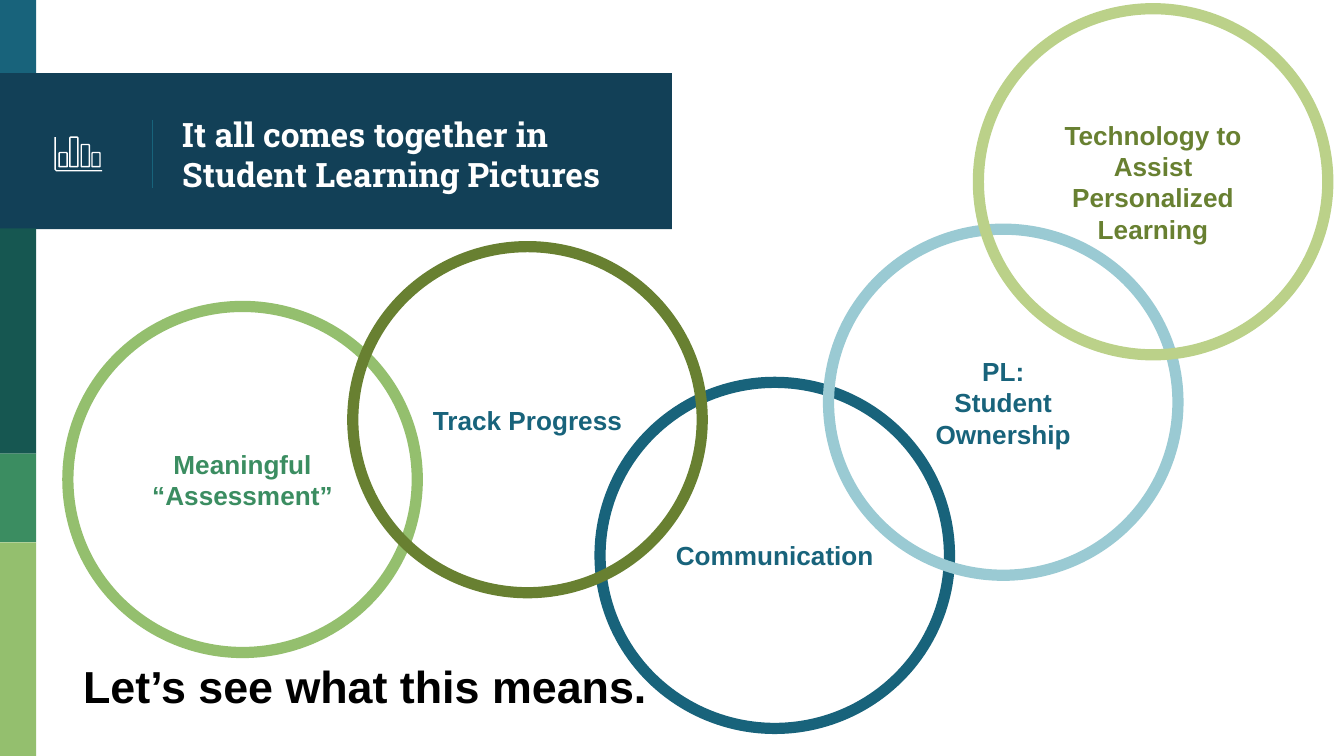
from dataclasses import dataclass

import pptx
import pptx.dml.color
import pptx.enum.shapes
import pptx.enum.text
import pptx.oxml
import pptx.oxml.ns
import pptx.util

PX = 4572
SLIDE_W, SLIDE_H = 2000, 1125
RING_W, RING_H = 520, 515
INSET = 20
WHITE = "FFFFFF"
NAVY = "124057"
TEAL = "18637B"
GREEN = "3B8D61"
LIME = "94BF6E"
OLIVE = "688031"
SHAPE = pptx.enum.shapes.MSO_SHAPE
ALIGN = pptx.enum.text.PP_ALIGN
ANCHOR = pptx.enum.text.MSO_ANCHOR


@dataclass
class Band:
    top: int
    width: int
    height: int
    color: str


@dataclass
class Ring:
    left: int
    top: int
    text: str
    line: str
    color: str


@dataclass
class IconBar:
    left: int
    top: int


BANDS = [
    Band(0, 54, 116, TEAL),
    Band(109, 1000, 232, NAVY),
    Band(340, 54, 335, "165751"),
    Band(675, 54, 132, GREEN),
    Band(807, 54, 318, LIME),
]
BACK_RINGS = [
    Ring(101, 456, "Meaningful “Assessment”", LIME, GREEN),
    Ring(893, 569, "Communication", TEAL, TEAL),
]
FRONT_RINGS = [
    Ring(525, 367, "Track Progress", OLIVE, TEAL),
    Ring(1233, 341, "PL:\nStudent Ownership", "9ACAD3", TEAL),
    Ring(1456, 13, "Technology to Assist Personalized Learning", "BBD189", OLIVE),
]
ICON_BARS = [IconBar(88, 227), IconBar(104, 204), IconBar(121, 215), IconBar(137, 227)]


def px(value: int) -> pptx.util.Emu:
    return pptx.util.Emu(value * PX)


def rgb(color: str) -> pptx.dml.color.RGBColor:
    return pptx.dml.color.RGBColor.from_string(color)


def set_line(line, color: str, width: float) -> None:
    line.color.rgb = rgb(color)
    line.width = pptx.util.Pt(width)


def set_text(
    tf, text: str, font: str, size: int, color: str, align, anchor, inset_y: int = INSET
) -> None:
    tf.text = text
    tf.word_wrap = True
    tf.auto_size = pptx.enum.text.MSO_AUTO_SIZE.NONE
    tf.vertical_anchor = anchor
    tf.margin_left = tf.margin_right = px(INSET)
    tf.margin_top = tf.margin_bottom = px(inset_y)
    for p in tf.paragraphs:
        p.alignment = align
        for r in p.runs:
            r.font.name = font
            r.font.size = pptx.util.Pt(size)
            r.font.bold = True
            r.font.color.rgb = rgb(color)


def draw_band(s, band: Band) -> None:
    sp = s.shapes.add_shape(SHAPE.RECTANGLE, 0, px(band.top), px(band.width), px(band.height))
    sp.shadow.inherit = False
    sp.fill.solid()
    sp.fill.fore_color.rgb = rgb(band.color)
    sp.line.fill.background()


def draw_ring(s, ring: Ring) -> None:
    sp = s.shapes.add_shape(SHAPE.OVAL, px(ring.left), px(ring.top), px(RING_W), px(RING_H))
    sp.shadow.inherit = False
    sp.fill.background()
    set_line(sp.line, ring.line, 6)
    set_text(sp.text_frame, ring.text, "Arial", 14, ring.color, ALIGN.CENTER, ANCHOR.MIDDLE)


def draw_outline(shapes, points: list[tuple[int, int]], close: bool) -> None:
    builder = shapes.build_freeform(*points[0], scale=PX)
    builder.add_line_segments(points[1:], close=close)
    sp = builder.convert_to_shape()
    sp.shadow.inherit = False
    sp.fill.background()
    set_line(sp.line, WHITE, 0.75)


def draw_icon(s) -> None:
    group = s.shapes.add_group_shape()
    draw_outline(group.shapes, [(82, 204), (82, 252), (84, 254), (152, 254)], False)
    for bar in ICON_BARS:
        x, y, right, bottom = bar.left, bar.top, bar.left + 12, 248
        draw_outline(
            group.shapes,
            [(right, bottom), (right, y + 1), (right - 1, y), (x + 1, y), (x, y + 1), (x, bottom)],
            True,
        )


def draw_divider(s) -> None:
    line = s.shapes.add_connector(
        pptx.enum.shapes.MSO_CONNECTOR.STRAIGHT, px(227), px(178), px(227), px(280)
    )
    set_line(line.line, TEAL, 0.75)
    line._element.spPr.append(
        pptx.oxml.parse_xml(f"<a:effectLst {pptx.oxml.ns.nsdecls('a')}/>")
    )


def draw_title(s) -> None:
    title = s.shapes.title
    title.left, title.top, title.width, title.height = px(251), px(117), px(702), px(224)
    set_text(
        title.text_frame, "It all comes together in\vStudent Learning Pictures",
        "Roboto Slab", 18, WHITE, ALIGN.LEFT, ANCHOR.MIDDLE,
    )
    tree = s.shapes._spTree
    tree.remove(title._element)
    tree.append(title._element)


def draw_closing(s) -> None:
    box = s.shapes.add_textbox(px(104), px(970), px(904), px(114))
    set_text(
        box.text_frame, "Let’s see what this means.",
        "Arial", 24, "000000", ALIGN.LEFT, ANCHOR.TOP, INSET // 2,
    )


def main() -> None:
    prs = pptx.Presentation()
    prs.slide_width, prs.slide_height = px(SLIDE_W), px(SLIDE_H)
    s = prs.slides.add_slide(prs.slide_layouts[5])
    for band in BANDS:
        draw_band(s, band)
    draw_divider(s)
    draw_title(s)
    for ring in BACK_RINGS:
        draw_ring(s, ring)
    draw_icon(s)
    *middle_rings, top_ring = FRONT_RINGS
    for ring in middle_rings:
        draw_ring(s, ring)
    draw_closing(s)
    draw_ring(s, top_ring)
    prs.save("out.pptx")


if __name__ == "__main__":
    main()
